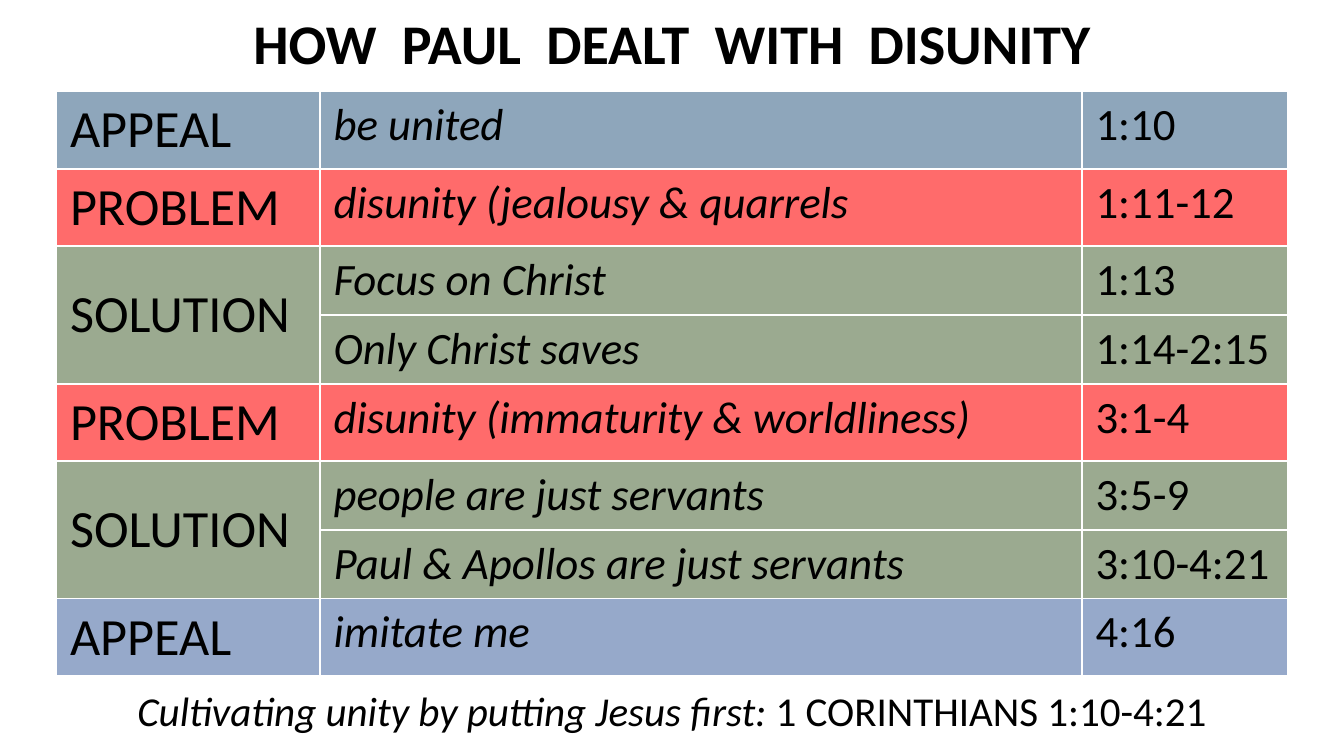
from lxml.etree import SubElement
from pptx import Presentation
from pptx.dml.color import RGBColor
from pptx.enum.text import MSO_ANCHOR, MSO_AUTO_SIZE, PP_ALIGN
from pptx.oxml.ns import qn
from pptx.util import Cm, Pt

TITLE = "HOW  PAUL  DEALT  WITH  DISUNITY"
FOOTER = [("Cultivating unity by putting Jesus first: ", True),
          ("1 CORINTHIANS 1:10-4:21", False)]
# step, fill colour, opacity in percent, [(point, verses)]
STEPS = [
    ("APPEAL", "1F4E79", 50, [("be united", "1:10")]),
    ("PROBLEM", "FF0000", 58, [("disunity (jealousy & quarrels", "1:11-12")]),
    ("SOLUTION", "385723", 50, [("Focus on Christ", "1:13"),
                                ("Only Christ saves", "1:14-2:15")]),
    ("PROBLEM", "FF0000", 58, [("disunity (immaturity & worldliness)", "3:1-4")]),
    ("SOLUTION", "385723", 50, [("people are just servants", "3:5-9"),
                                ("Paul & Apollos are just servants", "3:10-4:21")]),
    ("APPEAL", "2F5597", 50, [("imitate me", "4:16")]),
]
SLIDE_W, SLIDE_H = 25.4, 14.29
LEFT, TABLE_TOP, TITLE_H, FOOTER_TOP = 1.07, 1.73, 1.57, 12.93
COLUMNS = [4.98, 14.4, 3.89]
SINGLE_ROW, SPLIT_ROW = 1.45, 1.3


def rgb(value):
    return RGBColor.from_string(value)


def add_run(p, text, size, bold=False, italic=False):
    r = p.add_run()
    r.text = text
    style = {"name": "Calibri", "size": Pt(size), "bold": bold, "italic": italic}
    for name, value in style.items():
        setattr(r.font, name, value)
    r.font.color.rgb = rgb("000000")


def fill_cell(cell, color, opacity):
    cell.fill.solid()
    cell.fill.fore_color.rgb = rgb(color)
    clr = cell.fill._xPr.find(qn("a:solidFill"))[0]
    SubElement(clr, qn("a:alpha")).set("val", str(opacity * 1000))


def place(sp, left, top, width, height):
    box = {"left": left, "top": top, "width": width, "height": height}
    for name, value in box.items():
        setattr(sp, name, Cm(value))


def centred_paragraph(tf, anchor):
    tf.word_wrap = True
    tf.auto_size = MSO_AUTO_SIZE.NONE
    tf.vertical_anchor = anchor
    p = tf.paragraphs[0]
    p.alignment = PP_ALIGN.CENTER
    p.line_spacing = 0.9
    return p


def add_steps_table(s):
    row_count = sum(len(points) for *_, points in STEPS)
    frame = s.shapes.add_table(row_count, len(COLUMNS), Cm(LEFT), Cm(TABLE_TOP),
                               Cm(sum(COLUMNS)), Cm(SINGLE_ROW * row_count))
    table = frame.table
    table.horz_banding = False
    for column, width in zip(table.columns, COLUMNS):
        column.width = Cm(width)

    row = 0
    for step, color, opacity, points in STEPS:
        label = table.cell(row, 0)
        add_run(label.text_frame.paragraphs[0], step, 28)
        if len(points) > 1:
            label.merge(table.cell(row + len(points) - 1, 0))
            label.vertical_anchor = MSO_ANCHOR.MIDDLE
        for point, verses in points:
            table.rows[row].height = Cm(SINGLE_ROW if len(points) == 1 else SPLIT_ROW)
            for cell in table.rows[row].cells:
                fill_cell(cell, color, opacity)
            add_run(table.cell(row, 1).text_frame.paragraphs[0], point, 24, italic=True)
            add_run(table.cell(row, 2).text_frame.paragraphs[0], verses, 24)
            row += 1


def main():
    prs = Presentation()
    prs.slide_width, prs.slide_height = Cm(SLIDE_W), Cm(SLIDE_H)
    s = prs.slides.add_slide(prs.slide_layouts[5])

    title = s.shapes.title
    place(title, LEFT, 0, sum(COLUMNS), TITLE_H)
    add_run(centred_paragraph(title.text_frame, MSO_ANCHOR.BOTTOM), TITLE, 30, bold=True)

    add_steps_table(s)

    footer = s.shapes.add_textbox(0, Cm(FOOTER_TOP), Cm(SLIDE_W), Cm(SLIDE_H - FOOTER_TOP))
    p = centred_paragraph(footer.text_frame, MSO_ANCHOR.TOP)
    for text, italic in FOOTER:
        add_run(p, text, 22, italic=italic)

    prs.save("out.pptx")


if __name__ == "__main__":
    main()
